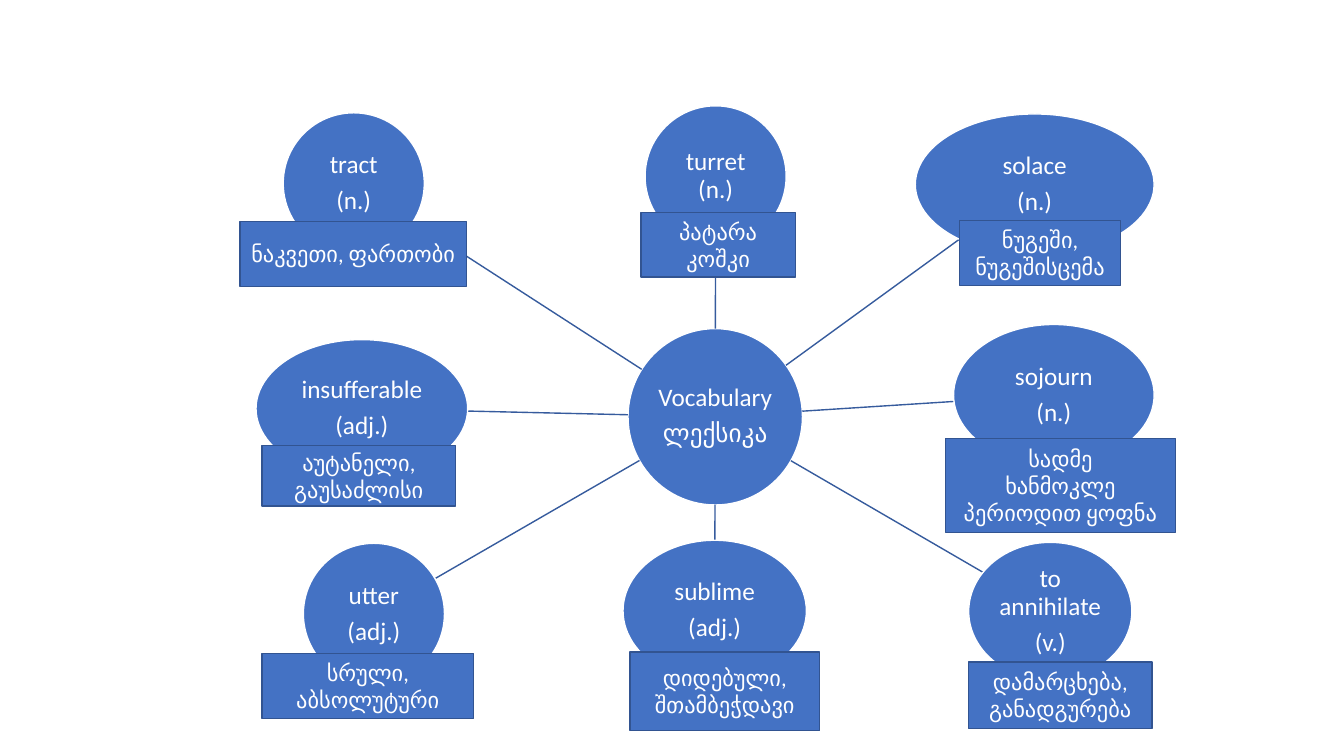
"""Build a vocabulary mind map: a hub, eight words and their Georgian meanings."""
from math import hypot

from lxml import etree
from pptx import Presentation
from pptx.dml.color import RGBColor
from pptx.enum.shapes import MSO_CONNECTOR, MSO_SHAPE
from pptx.enum.text import MSO_ANCHOR, PP_ALIGN
from pptx.oxml.ns import qn
from pptx.util import Pt

OVAL, RECTANGLE = MSO_SHAPE.OVAL, MSO_SHAPE.RECTANGLE
STRAIGHT = MSO_CONNECTOR.STRAIGHT
MIDDLE, CENTER = MSO_ANCHOR.MIDDLE, PP_ALIGN.CENTER

BUBBLE = {
    "preset": OVAL, "line": "FFFFFF", "size": 18,
    "margins": {"margin_left": Pt(0.7), "margin_right": Pt(0.7),
                "margin_top": Pt(0.7), "margin_bottom": Pt(0.7)},
    "paragraph": {"alignment": CENTER, "line_spacing": 0.9, "space_after": Pt(6.3)},
}
MEANING = {
    "preset": RECTANGLE, "line": "325491", "size": 16,
    "margins": {},
    "paragraph": {"alignment": CENTER},
}

HUB_BOX = (448.6, 234.7, 124.6, 126)
HUB_LINES = ["Vocabulary", "ლექსიკა"]
WORDS = [
    (["turret (n.)"], (460.8, 75.6, 100.8, 100.8),
     ["პატარა კოშკი"], (457.9, 151.9, 110.2, 46.1)),
    (["solace", "(n.)"], (653.8, 81.4, 170.6, 100.8),
     ["ნუგეში, ნუგეშისცემა"], (685.4, 157.7, 115.2, 46.1)),
    (["sojourn", "(n.)"], (681.1, 231.8, 143.3, 100.8),
     ["სადმე", "ხანმოკლე პერიოდით ყოფნა"], (675.4, 313.2, 164.2, 67)),
    (["to annihilate", "(v.)"], (691.9, 387.4, 116.6, 98.6),
     ["დამარცხება, განადგურება"], (691.9, 473, 131, 47.5)),
    (["sublime", "(adj.)"], (445, 385.9, 131, 100.8),
     ["დიდებული, შთამბეჭდავი"], (450, 465.8, 135.4, 56.2)),
    (["utter", "(adj.)"], (216.7, 388.1, 100.8, 100.8),
     ["სრული, აბსოლუტური"], (187.2, 466.6, 151.2, 46.8)),
    (["insufferable", "(adj.)"], (182.9, 242.6, 151.2, 98.6),
     ["აუტანელი, გაუსაძლისი"], (187.2, 318.2, 138.2, 43.2)),
    (["tract", "(n.)"], (202.3, 80.6, 100.8, 100.8),
     ["ნაკვეთი, ფართობი"], (171.4, 158.4, 162, 46.1)),
]


def edge_point(box, other):
    """Return where the line between two oval centres leaves the first oval."""
    left, top, width, height = box
    center_x, center_y = left + width / 2, top + height / 2
    run = other[0] + other[2] / 2 - center_x
    rise = other[1] + other[3] / 2 - center_y
    scale = 1 / hypot(run / (width / 2), rise / (height / 2))
    return Pt(center_x + run * scale), Pt(center_y + rise * scale)


def add_node(slide, box, lines, style):
    """Add one filled shape with its centred text."""
    shape = slide.shapes.add_shape(style["preset"], *map(Pt, box))
    shape.shadow.inherit = False
    shape.fill.solid()
    shape.fill.fore_color.rgb = RGBColor.from_string("4472C4")
    shape.line.color.rgb = RGBColor.from_string(style["line"])
    shape.line.width = Pt(1)
    frame = shape.text_frame
    frame_format = {"word_wrap": True, "vertical_anchor": MIDDLE, **style["margins"]}
    for name, value in frame_format.items():
        setattr(frame, name, value)
    for index, text in enumerate(lines):
        paragraph = frame.add_paragraph() if index else frame.paragraphs[0]
        for name, value in style["paragraph"].items():
            setattr(paragraph, name, value)
        run = paragraph.add_run()
        run.text = text
        run.font.name = "Calibri"
        run.font.size = Pt(style["size"])
        run.font.color.rgb = RGBColor.from_string("FFFFFF")


presentation = Presentation()
presentation.slide_width, presentation.slide_height = Pt(960), Pt(540)
slide = presentation.slides.add_slide(presentation.slide_layouts[6])

add_node(slide, HUB_BOX, HUB_LINES, BUBBLE)
for word_lines, word_box, _, _ in WORDS:
    connector = slide.shapes.add_connector(
        STRAIGHT, *edge_point(HUB_BOX, word_box), *edge_point(word_box, HUB_BOX))
    connector.line.color.rgb = RGBColor.from_string("365B9D")
    connector.line.width = Pt(1)
    etree.SubElement(connector._element.spPr, qn("a:effectLst"))
    add_node(slide, word_box, word_lines, BUBBLE)

for _, _, meaning_lines, meaning_box in WORDS:
    add_node(slide, meaning_box, meaning_lines, MEANING)

presentation.save("out.pptx")
